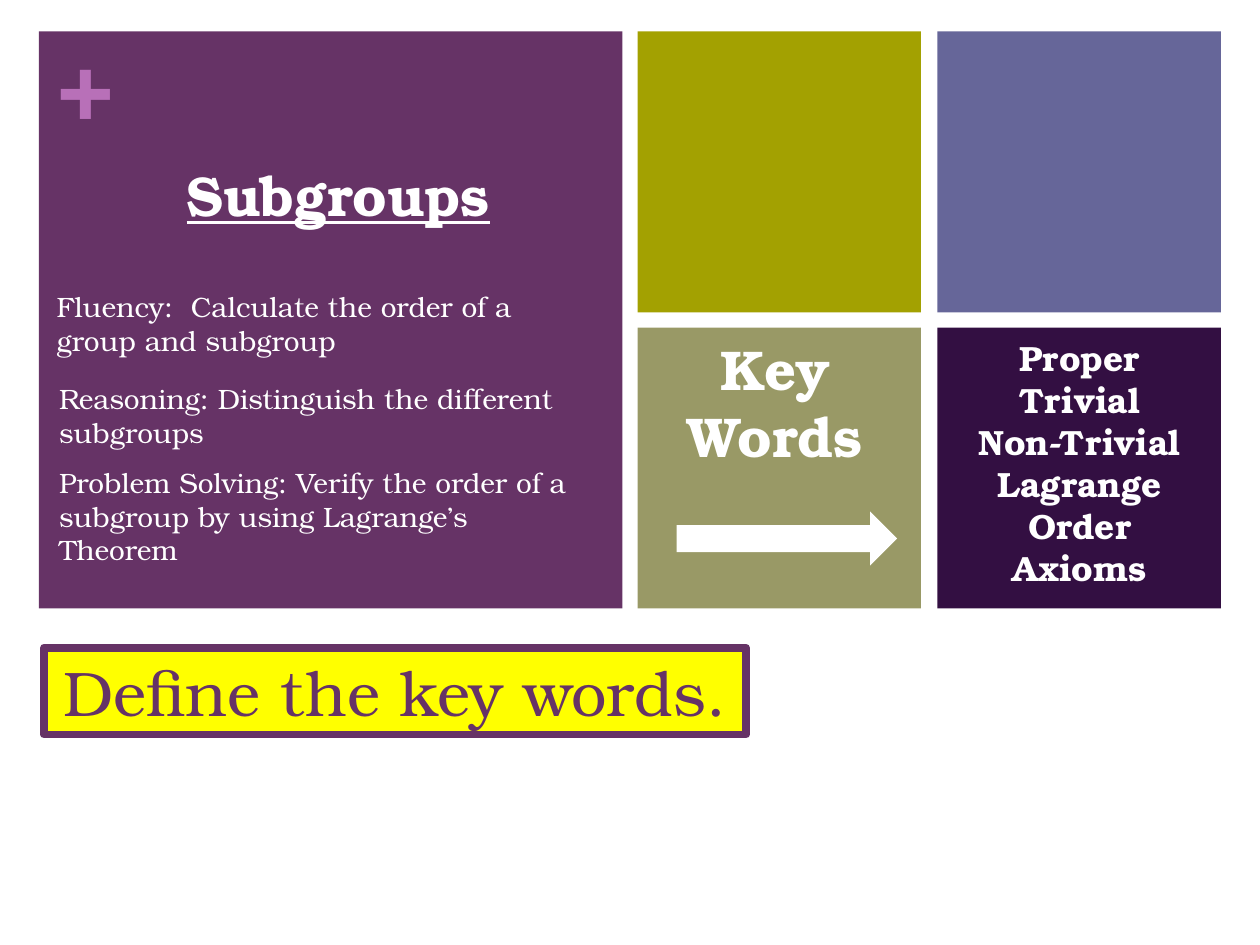
from collections import namedtuple

from pptx import Presentation
from pptx.dml.color import RGBColor
from pptx.enum.shapes import MSO_SHAPE
from pptx.enum.text import MSO_ANCHOR, PP_ALIGN
from pptx.util import Inches, Pt

WHITE = RGBColor(0xFF, 0xFF, 0xFF)
PLUM = RGBColor(0x66, 0x33, 0x66)
ORCHID = RGBColor(0xB8, 0x70, 0xB8)
OLIVE = RGBColor(0xA3, 0xA1, 0x01)
SLATE = RGBColor(0x66, 0x66, 0x99)
SAGE = RGBColor(0x99, 0x99, 0x66)
AUBERGINE = RGBColor(0x33, 0x0F, 0x42)
YELLOW = RGBColor(0xFF, 0xFF, 0x00)

FONT = "TeX Gyre Bonum"
HEADING = {"size": Pt(32), "bold": True}
TITLE = {**HEADING, "underline": True}
TERM = {"size": Pt(20), "bold": True}
GOAL = {"size": Pt(16)}
PLUS = {"size": Pt(54), "bold": True}
TASK = {"size": Pt(36)}

SLIDE_WIDTH, SLIDE_HEIGHT = Inches(10), Inches(7.5)
TILE_WIDTH, TILE_HEIGHT = 22.5, 29.73
COLUMN_LEFT, COLUMN_STEP = 50.6, 23.8
ROW_TOP, ROW_STEP = 3.33, 31.33

PercentBox = namedtuple("PercentBox", "left top width height")


def within(box, right, down, width, height):
    return PercentBox(box.left + right, box.top + down, width, height)


def lengths(box):
    sides = (SLIDE_WIDTH, SLIDE_HEIGHT) * 2
    return [round(side * share / 100) for side, share in zip(sides, box)]


def tile_box(column, row):
    return PercentBox(COLUMN_LEFT + column * COLUMN_STEP,
                      ROW_TOP + row * ROW_STEP, TILE_WIDTH, TILE_HEIGHT)


def add_block(slide, box, fill, preset=MSO_SHAPE.RECTANGLE):
    block = slide.shapes.add_shape(preset, *lengths(box))
    block.shadow.inherit = False
    block.fill.solid()
    block.fill.fore_color.rgb = fill
    block.line.fill.background()
    return block


def write(frame, lines, style, color=WHITE, align=PP_ALIGN.CENTER,
          anchor=MSO_ANCHOR.MIDDLE):
    frame.word_wrap = True
    frame.vertical_anchor = anchor
    for index, line in enumerate(lines):
        paragraph = frame.add_paragraph() if index else frame.paragraphs[0]
        paragraph.alignment = align
        run = paragraph.add_run()
        run.text = line
        run.font.name = FONT
        run.font.color.rgb = color
        for attribute, value in style.items():
            setattr(run.font, attribute, value)


def add_text(slide, box, lines, style, **layout):
    frame = slide.shapes.add_textbox(*lengths(box)).text_frame
    write(frame, lines, style, **layout)
    return frame


def add_goals_panel(slide, box):
    add_block(slide, box, PLUM)
    plus = add_text(slide, within(box, 1.5, -0.8, 4.5, 12.13), ["+"], PLUS,
                    color=ORCHID, align=PP_ALIGN.LEFT, anchor=MSO_ANCHOR.TOP)
    for side in ("left", "top", "right", "bottom"):
        setattr(plus, f"margin_{side}", 0)
    add_text(slide, within(box, 2, 6.53, 43.5, 21.47), ["Subgroups"], TITLE)
    goals = [
        (0.4, 24.4, 39.8, "Fluency:  Calculate the order of a group and subgroup"),
        (0.6, 34.13, 43.1, "Reasoning: Distinguish the different subgroups"),
        (0.6, 44.8, 43.1, "Problem Solving: Verify the order of a subgroup "
                          "by using Lagrange’s Theorem"),
    ]
    for right, down, width, goal in goals:
        add_text(slide, within(box, right, down, width, 12.93), [goal], GOAL,
                 align=PP_ALIGN.LEFT)


def add_key_words_tile(slide, box):
    add_block(slide, box, SAGE)
    add_text(slide, within(box, 1.3, -9.33, 19.3, 34.4), ["Key Words"], HEADING)
    add_block(slide, within(box, 3.1, 19.47, 17.5, 5.73), WHITE,
              MSO_SHAPE.RIGHT_ARROW)


def add_terms_tile(slide, box):
    add_block(slide, box, AUBERGINE)
    terms = ["Proper", "Trivial", "Non-Trivial", "Lagrange", "Order", "Axioms"]
    add_text(slide, within(box, 0.1, -2.93, 22.4, 34.4), terms, TERM)


def add_task_banner(slide, box):
    banner = add_block(slide, box, YELLOW)
    banner.line.color.rgb = PLUM
    banner.line.width = Pt(4.5)
    write(banner.text_frame, ["Define the key words."], TASK, color=PLUM,
          anchor=MSO_ANCHOR.TOP)


def main():
    presentation = Presentation()
    presentation.slide_width = SLIDE_WIDTH
    presentation.slide_height = SLIDE_HEIGHT
    slide = presentation.slides.add_slide(presentation.slide_layouts[6])
    add_block(slide, tile_box(0, 0), OLIVE)
    add_block(slide, tile_box(1, 0), SLATE)
    add_goals_panel(slide, PercentBox(3.1, ROW_TOP, 46.3, ROW_STEP + TILE_HEIGHT))
    add_key_words_tile(slide, tile_box(0, 1))
    add_terms_tile(slide, tile_box(1, 1))
    add_task_banner(slide, PercentBox(3.5, 68.53, 55.7, 9.2))
    presentation.save("out.pptx")


if __name__ == "__main__":
    main()
